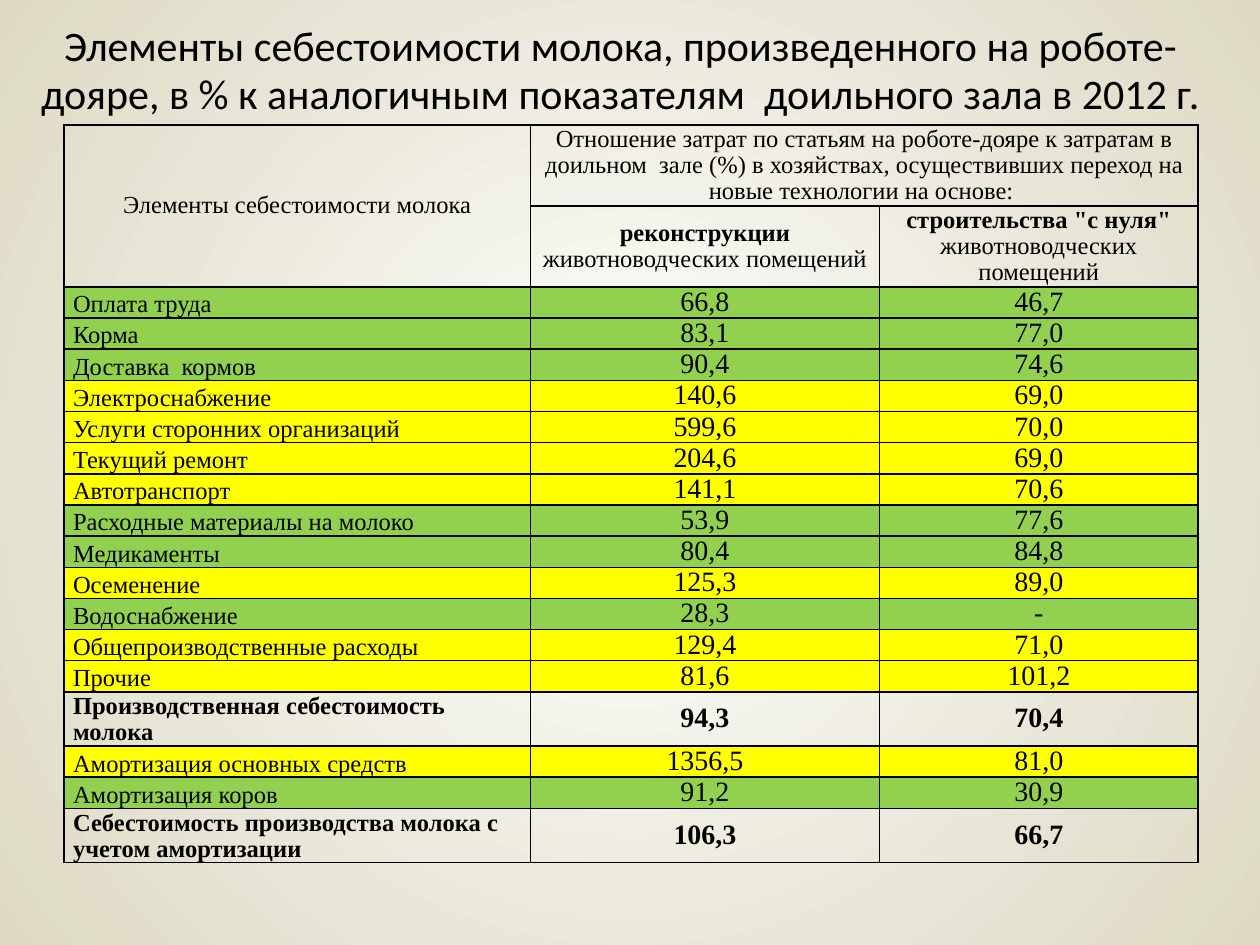
from dataclasses import dataclass
from typing import Optional

from lxml.etree import SubElement
from pptx import Presentation
from pptx.dml.color import RGBColor
from pptx.enum.text import MSO_ANCHOR, PP_ALIGN
from pptx.oxml import parse_xml
from pptx.oxml.ns import nsdecls, qn
from pptx.util import Inches, Pt

COLORS = {
    "text": "000000",
    "border": "000000",
    "lower": "92D050",
    "higher": "FFFF00",
    "center": "FFFFFF",
    "edge": "DDD9C3",
}
BODY_FONT = "Times New Roman"
LABEL_SIZE, VALUE_SIZE = 14, 16
LINE_SPACING = 0.96
COLUMN_SHARES = (0.37, 0.277, 0.253)  # of the slide width
HEADER_UNITS, LINE_UNITS, TOTAL_UNITS = 2.6, 1, 1.74
TABLE_HEIGHT = 5.86


@dataclass
class CostItem:
    label: str
    reconstruction: str
    new_build: str
    color: Optional[str] = None

    @property
    def is_total(self) -> bool:
        return self.color is None


@dataclass
class TextPart:
    text: str
    bold: bool = False
    size: int = LABEL_SIZE
    font: str = BODY_FONT


ITEMS = [
    CostItem("Оплата труда", "66,8", "46,7", "lower"),
    CostItem("Корма", "83,1", "77,0", "lower"),
    CostItem("Доставка  кормов", "90,4", "74,6", "lower"),
    CostItem("Электроснабжение", "140,6", "69,0", "higher"),
    CostItem("Услуги сторонних организаций", "599,6", "70,0", "higher"),
    CostItem("Текущий ремонт", "204,6", "69,0", "higher"),
    CostItem("Автотранспорт", "141,1", "70,6", "higher"),
    CostItem("Расходные материалы на молоко", "53,9", "77,6", "lower"),
    CostItem("Медикаменты", "80,4", "84,8", "lower"),
    CostItem("Осеменение", "125,3", "89,0", "higher"),
    CostItem("Водоснабжение", "28,3", "-", "lower"),
    CostItem("Общепроизводственные расходы", "129,4", "71,0", "higher"),
    CostItem("Прочие", "81,6", "101,2", "higher"),
    CostItem("Производственная себестоимость молока", "94,3", "70,4"),
    CostItem("Амортизация основных средств", "1356,5", "81,0", "higher"),
    CostItem("Амортизация коров", "91,2", "30,9", "lower"),
    CostItem("Себестоимость производства молока с учетом амортизации", "106,3", "66,7"),
]
HEADERS = {
    (0, 0): [TextPart("Элементы себестоимости молока")],
    (0, 1): [TextPart(
        "Отношение затрат по статьям на роботе-дояре к затратам в доильном  зале (%) "
        "в хозяйствах, осуществивших переход на новые технологии на основе: ")],
    (1, 1): [TextPart("реконструкции ", True), TextPart("животноводческих помещений")],
    (1, 2): [TextPart('строительства "с нуля" ', True), TextPart("животноводческих помещений")],
}
TITLE = TextPart(
    "Элементы себестоимости молока, произведенного на роботе-дояре, "
    "в % к аналогичным показателям  доильного зала в 2012 г.", size=24, font="Calibri")


def set_attributes(target, values: dict) -> None:
    for name, value in values.items():
        setattr(target, name, value)


def write_text(text_frame, parts: list[TextPart], alignment) -> None:
    paragraph = text_frame.paragraphs[0]
    set_attributes(paragraph, {"alignment": alignment, "line_spacing": LINE_SPACING})
    for part in parts:
        run = paragraph.add_run()
        run.text = part.text
        set_attributes(run.font, {"name": part.font, "size": Pt(part.size), "bold": part.bold})
        run.font.color.rgb = RGBColor.from_string(COLORS["text"])


def write_cell(cell, parts: list[TextPart], alignment=PP_ALIGN.CENTER,
               anchor=MSO_ANCHOR.MIDDLE) -> None:
    cell.vertical_anchor = anchor
    write_text(cell.text_frame, parts, alignment)


def format_cell(cell, color: Optional[str]) -> None:
    """Set the margins, the fill and a thin border on all four sides."""
    set_attributes(cell, {"margin_left": Inches(0.07), "margin_right": Inches(0.07),
                          "margin_top": 0, "margin_bottom": 0})
    if color:
        cell.fill.solid()
        cell.fill.fore_color.rgb = RGBColor.from_string(COLORS[color])
    else:
        cell.fill.background()
    properties = cell._tc.get_or_add_tcPr()
    for position, side in enumerate("LRTB"):
        properties.insert(position, parse_xml(
            f'<a:ln{side} {nsdecls("a")} w="{Pt(1)}"><a:solidFill>'
            f'<a:srgbClr val="{COLORS["border"]}"/></a:solidFill></a:ln{side}>'))


def paint_background(slide) -> None:
    """Fill the slide with a gradient that spreads in circles from its centre."""
    fill = slide.background.fill
    fill.gradient()
    for stop, name in zip(fill.gradient_stops, ("center", "edge")):
        stop.color.rgb = RGBColor.from_string(COLORS[name])
    gradient = slide.element.find(".//" + qn("a:gradFill"))
    gradient.remove(gradient.find(qn("a:lin")))
    circle = SubElement(gradient, qn("a:path"), {"path": "circle"})
    SubElement(circle, qn("a:fillToRect"), dict.fromkeys("ltrb", "50000"))


def add_title(slide) -> None:
    title = slide.shapes.title
    set_attributes(title, {"left": Inches(0.12), "top": Inches(0.13),
                           "width": Inches(9.61), "height": Inches(0.87)})
    set_attributes(title.text_frame, {"word_wrap": True, "vertical_anchor": MSO_ANCHOR.MIDDLE})
    write_text(title.text_frame, [TITLE], PP_ALIGN.CENTER)


def add_cost_table(slide, slide_width: int) -> None:
    units = [HEADER_UNITS] * 2 + [TOTAL_UNITS if item.is_total else LINE_UNITS for item in ITEMS]
    widths = [int(slide_width * share) for share in COLUMN_SHARES]
    table = slide.shapes.add_table(
        len(units), len(widths), Inches(0.51), Inches(0.99),
        sum(widths), Inches(TABLE_HEIGHT)).table
    set_attributes(table, {"first_row": False, "horz_banding": False})
    for column, width in zip(table.columns, widths):
        column.width = width
    for row, unit in zip(table.rows, units):
        row.height = Inches(TABLE_HEIGHT * unit / sum(units))
    for row, color in zip(table.rows, [None, None] + [item.color for item in ITEMS]):
        for cell in row.cells:
            format_cell(cell, color)

    table.cell(0, 0).merge(table.cell(1, 0))
    table.cell(0, 1).merge(table.cell(0, 2))
    for (row_index, column_index), parts in HEADERS.items():
        write_cell(table.cell(row_index, column_index), parts)
    for row_index, item in enumerate(ITEMS, start=2):
        write_cell(table.cell(row_index, 0), [TextPart(item.label, item.is_total)],
                   PP_ALIGN.LEFT, MSO_ANCHOR.BOTTOM)
        for column_index, value in enumerate((item.reconstruction, item.new_build), start=1):
            write_cell(table.cell(row_index, column_index),
                       [TextPart(value, item.is_total, VALUE_SIZE)])


def main() -> None:
    presentation = Presentation()
    set_attributes(presentation, {"slide_width": Inches(10), "slide_height": Inches(7.5)})
    slide = presentation.slides.add_slide(presentation.slide_layouts.get_by_name("Title Only"))
    paint_background(slide)
    add_title(slide)
    add_cost_table(slide, presentation.slide_width)
    presentation.save("out.pptx")


if __name__ == "__main__":
    main()
